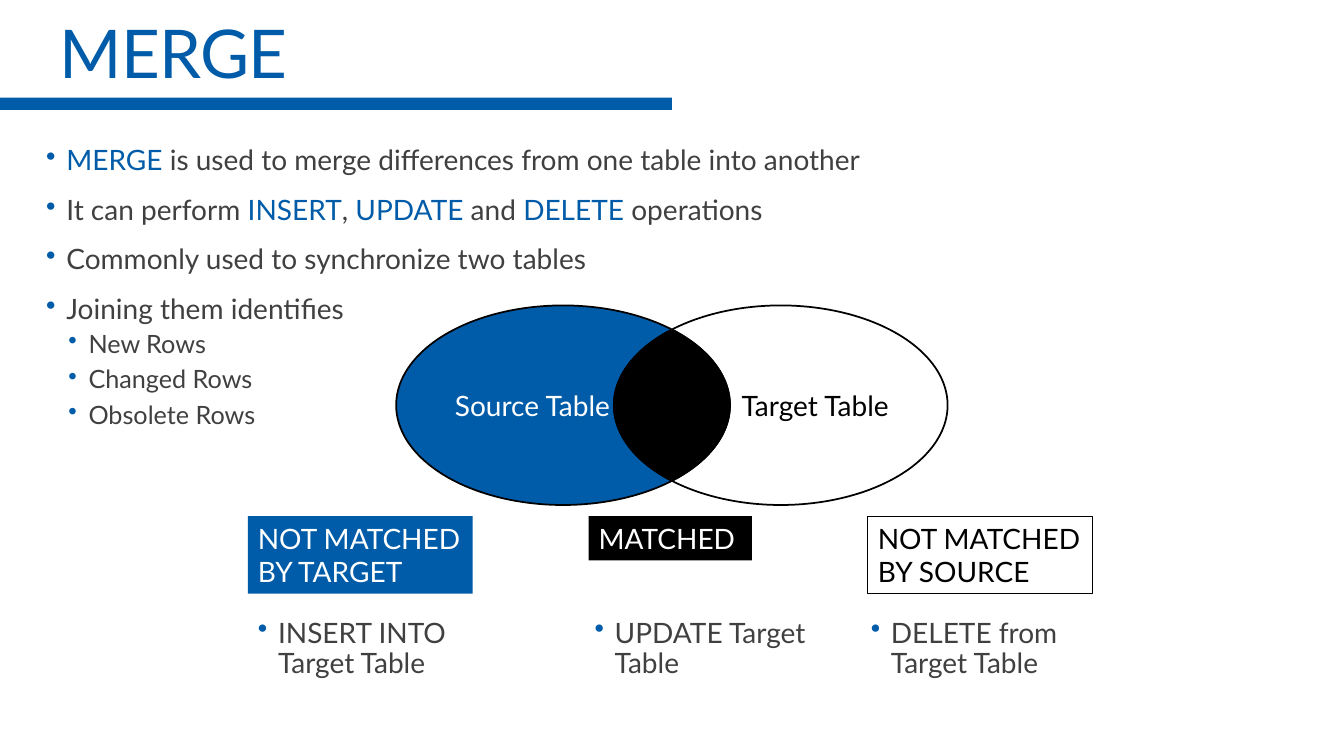
import math
from collections import namedtuple

import pptx
import pptx.dml.color
import pptx.enum.shapes
import pptx.enum.text
import pptx.oxml.ns
import pptx.util
from lxml import etree

COLORS = {"blue": "005CA8", "gray": "404040", "black": "000000", "white": "FFFFFF"}
FONT = "Lato"
SLIDE_WIDTH = pptx.util.Inches(13.33)
SLIDE_HEIGHT = pptx.util.Inches(7.5)
SHAPES = pptx.enum.shapes.MSO_SHAPE
ALIGN = pptx.enum.text.PP_ALIGN
ANCHOR = pptx.enum.text.MSO_ANCHOR

Box = namedtuple("Box", "left top width height")
SLIDE_BOX = Box(0, 0, SLIDE_WIDTH, SLIDE_HEIGHT)

BULLETS = [
    (0, [("MERGE", "blue"), (" is used to merge differences from one table into another", "gray")]),
    (0, [("It can perform ", "gray"), ("INSERT", "blue"), (", ", "gray"), ("UPDATE", "blue"),
         (" and ", "gray"), ("DELETE", "blue"), (" operations", "gray")]),
    (0, [("Commonly used to synchronize two tables", "gray")]),
    (0, [("Joining them identifies", "gray")]),
    (1, [("New Rows", "gray")]),
    (1, [("Changed Rows", "gray")]),
    (1, [("Obsolete Rows", "gray")]),
]
# Per level: left indent, space before, space after, text size
LEVELS = [(0.2, 12, 2, 20), (0.42, 2, 4, 18)]

# label, fill, text colour, line, label left, width, height, action, action left (percent of the box)
OUTCOMES = [
    ("NOT MATCHED BY TARGET", "blue", "white", None, 0, 26.42, 35.32,
     "INSERT INTO Target Table", 0),
    ("MATCHED", "black", "white", None, 40.05, 19.19, 20.18,
     "UPDATE Target Table", 39.57),
    ("NOT MATCHED BY SOURCE", "white", "black", 0.75, 72.87, 26.42, 35.32,
     "DELETE from Target Table", 72.04),
]


def rgb(color):
    return pptx.dml.color.RGBColor.from_string(COLORS[color])


def part(box, left, top, width, height):
    """Return the box at the given percentages of another box."""
    return Box(round(box.left + box.width * left / 100), round(box.top + box.height * top / 100),
               round(box.width * width / 100), round(box.height * height / 100))


def style_font(font, size, color):
    font.name = FONT
    font.size = pptx.util.Pt(size)
    font.color.rgb = rgb(color)


def paint(shape, fill, line=None):
    shape.shadow.inherit = False
    if fill:
        shape.fill.solid()
        shape.fill.fore_color.rgb = rgb(fill)
    else:
        shape.fill.background()
    if line:
        shape.line.color.rgb = rgb("black")
        shape.line.width = pptx.util.Pt(line)
    else:
        shape.line.fill.background()


def add_filled(slide, kind, box, fill, line=None):
    shape = slide.shapes.add_shape(kind, *box)
    paint(shape, fill, line)
    return shape


def write_label(shape, text, color, anchor, align=ALIGN.LEFT):
    frame = shape.text_frame
    frame.word_wrap = True
    frame.vertical_anchor = anchor
    frame.text = text
    frame.paragraphs[0].alignment = align
    style_font(frame.paragraphs[0].runs[0].font, 20, color)


def add_bullets(slide, box, items):
    frame = slide.shapes.add_textbox(*box).text_frame
    frame.word_wrap = True
    for index, (level, pieces) in enumerate(items):
        paragraph = frame.add_paragraph() if index else frame.paragraphs[0]
        indent, before, after, size = LEVELS[level]
        properties = paragraph._p.get_or_add_pPr()
        properties.set("marL", str(pptx.util.Inches(indent)))
        properties.set("indent", str(pptx.util.Inches(-0.2)))
        bullet_color = etree.SubElement(properties, pptx.oxml.ns.qn("a:buClr"))
        etree.SubElement(bullet_color, pptx.oxml.ns.qn("a:srgbClr")).set("val", COLORS["blue"])
        etree.SubElement(properties, pptx.oxml.ns.qn("a:buChar")).set("char", "•")
        paragraph.level = level
        paragraph.line_spacing = 0.9
        if index:
            paragraph.space_before = pptx.util.Pt(before)
        paragraph.space_after = pptx.util.Pt(after)
        for text, color in pieces:
            run = paragraph.add_run()
            run.text = text
            style_font(run.font, size, color)


def add_heading(slide, box):
    add_filled(slide, SHAPES.RECTANGLE, part(box, 0, 88.99, 50, 11.01), "blue")
    title = slide.shapes.title
    title.left, title.top, title.width, title.height = part(box, 2.7, 0, 81.83, 88.99)
    frame = title.text_frame
    frame.auto_size = pptx.enum.text.MSO_AUTO_SIZE.NONE
    frame.margin_left = pptx.util.Inches(0.23)
    write_label(title, "MERGE", "blue", ANCHOR.BOTTOM)
    paragraph = frame.paragraphs[0]
    paragraph.line_spacing = 0.9
    font = paragraph.runs[0].font
    font.size = pptx.util.Pt(48)
    paragraph.runs[0]._r.get_or_add_rPr().set("spc", "-50")


def add_venn(slide, box):
    """Draw two overlapping ovals and the lens they share."""
    oval_width = round(box.width * 23 / 38)
    shift = box.width - oval_width
    tables = [("Source Table", "blue", "white", ALIGN.LEFT),
              ("Target Table", None, "black", ALIGN.RIGHT)]
    for index, (name, fill, color, align) in enumerate(tables):
        oval = add_filled(slide, SHAPES.OVAL,
                          Box(box.left + index * shift, box.top, oval_width, box.height), fill, 1.25)
        write_label(oval, name, color, ANCHOR.MIDDLE, align)

    radius_x, radius_y = oval_width / 2, box.height / 2
    middle_x, middle_y = box.left + box.width / 2, box.top + radius_y
    half_angle = math.acos(shift / oval_width)
    steps = 40
    points = []
    for side in (1, -1):
        for step in range(steps):
            angle = half_angle * (2 * step / steps - 1)
            points.append((middle_x + side * (radius_x * math.cos(angle) - shift / 2),
                           middle_y + side * radius_y * math.sin(angle)))
    builder = slide.shapes.build_freeform(*map(round, points[0]))
    builder.add_line_segments([(round(x), round(y)) for x, y in points[1:]], close=True)
    paint(builder.convert_to_shape(), "black", 1.25)


def add_outcomes(slide, box):
    for label, fill, color, line, left, width, height, action, action_left in OUTCOMES:
        tag = add_filled(slide, SHAPES.RECTANGLE, part(box, left, 0, width, height), fill, line)
        write_label(tag, label, color, ANCHOR.TOP)
        add_bullets(slide, part(box, action_left, 44.5, 27.96, 55.5), [(0, [(action, "gray")])])


def main():
    deck = pptx.Presentation()
    deck.slide_width, deck.slide_height = SLIDE_WIDTH, SLIDE_HEIGHT
    slide = deck.slides.add_slide(deck.slide_layouts[5])
    add_heading(slide, part(SLIDE_BOX, 0, 0, 100, 14.53))
    add_bullets(slide, part(SLIDE_BOX, 2.7, 18.67, 94.5, 41.07), BULLETS)
    add_venn(slide, part(SLIDE_BOX, 29.48, 40.4, 41.03, 26.4))
    add_outcomes(slide, part(SLIDE_BOX, 18.45, 68.27, 63.3, 29.07))
    deck.save("out.pptx")


if __name__ == "__main__":
    main()
